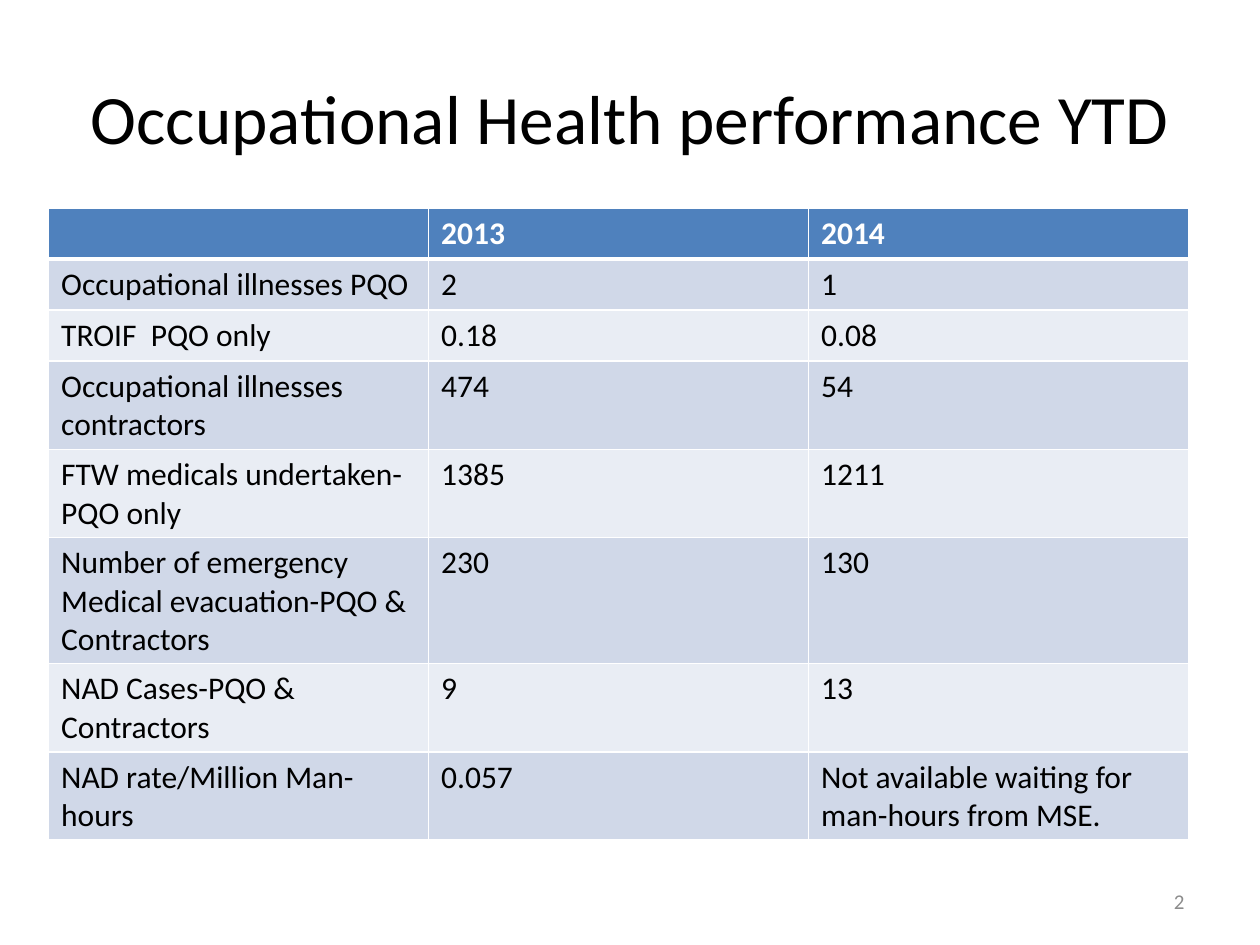
import pptx
import pptx.util
import pptx.dml.color
import pptx.enum.text
import pptx.oxml.ns
import lxml.etree

Cm = pptx.util.Cm
PP_ALIGN = pptx.enum.text.PP_ALIGN
MSO_ANCHOR = pptx.enum.text.MSO_ANCHOR
COLORS = {
    "text": "000000",
    "white": "FFFFFF",
    "header": "4F81BD",
    "odd": "D0D8E8",
    "even": "E9EDF4",
    "number": "8C8C8C",
}


def set_text(tf, text, size=18, color="text", bold=False,
             align=PP_ALIGN.LEFT, anchor=MSO_ANCHOR.TOP):
    tf.word_wrap = True
    tf.vertical_anchor = anchor
    p = tf.paragraphs[0]
    p.alignment = align
    r = p.add_run()
    r.text = text
    r.font.name = "Calibri"
    r.font.size = pptx.util.Pt(size)
    r.font.bold = bold
    r.font.color.rgb = pptx.dml.color.RGBColor.from_string(COLORS[color])


def set_border(cell, side, width):
    """Add a white border; call before the cell is filled."""
    tag = pptx.oxml.ns.qn
    ln = lxml.etree.SubElement(cell._tc.get_or_add_tcPr(), tag("a:ln" + side),
                               w=str(pptx.util.Pt(width)))
    fill = lxml.etree.SubElement(ln, tag("a:solidFill"))
    lxml.etree.SubElement(fill, tag("a:srgbClr"), val=COLORS["white"])


prs = pptx.Presentation()
prs.slide_width, prs.slide_height = Cm(25.4), Cm(19.05)
s = prs.slides.add_slide(prs.slide_layouts[6])

# Title
sp = s.shapes.add_textbox(Cm(1.27), Cm(0.76), Cm(22.86), Cm(3.18))
set_text(sp.text_frame, "Occupational Health performance YTD", size=39.6,
         align=PP_ALIGN.CENTER, anchor=MSO_ANCHOR.MIDDLE)

# Performance table; rows grow with their wrapped text
rows = [
    ("", "2013", "2014"),
    ("Occupational illnesses PQO", "2", "1"),
    ("TROIF  PQO only", "0.18", "0.08"),
    ("Occupational illnesses contractors", "474", "54"),
    ("FTW medicals undertaken-PQO only", "1385", "1211"),
    ("Number of emergency Medical evacuation-PQO & Contractors", "230", "130"),
    ("NAD Cases-PQO & Contractors", "9", "13"),
    ("NAD rate/Million Man-hours", "0.057",
     "Not available waiting for man-hours from MSE."),
]
row_h, col_w = Cm(1.03), Cm(7.66)
table = s.shapes.add_table(len(rows), 3, Cm(0.98), Cm(4.19),
                           col_w * 3, row_h * len(rows)).table
for col in table.columns:
    col.width = col_w
for i, row in enumerate(rows):
    table.rows[i].height = row_h
    header = i == 0
    band = "header" if header else "odd" if i % 2 else "even"
    for j, text in enumerate(row):
        cell = table.cell(i, j)
        for side in "LRTB":
            thick = (header and side == "B") or (i == 1 and side == "T")
            set_border(cell, side, 3 if thick else 1)
        cell.fill.solid()
        cell.fill.fore_color.rgb = pptx.dml.color.RGBColor.from_string(COLORS[band])
        set_text(cell.text_frame, text, bold=header,
                 color="white" if header else "text")

# Slide number
sp = s.shapes.add_textbox(Cm(18.2), Cm(17.66), Cm(5.93), Cm(1.01))
set_text(sp.text_frame, "2", size=12, color="number",
         align=PP_ALIGN.RIGHT, anchor=MSO_ANCHOR.MIDDLE)

prs.save("out.pptx")
